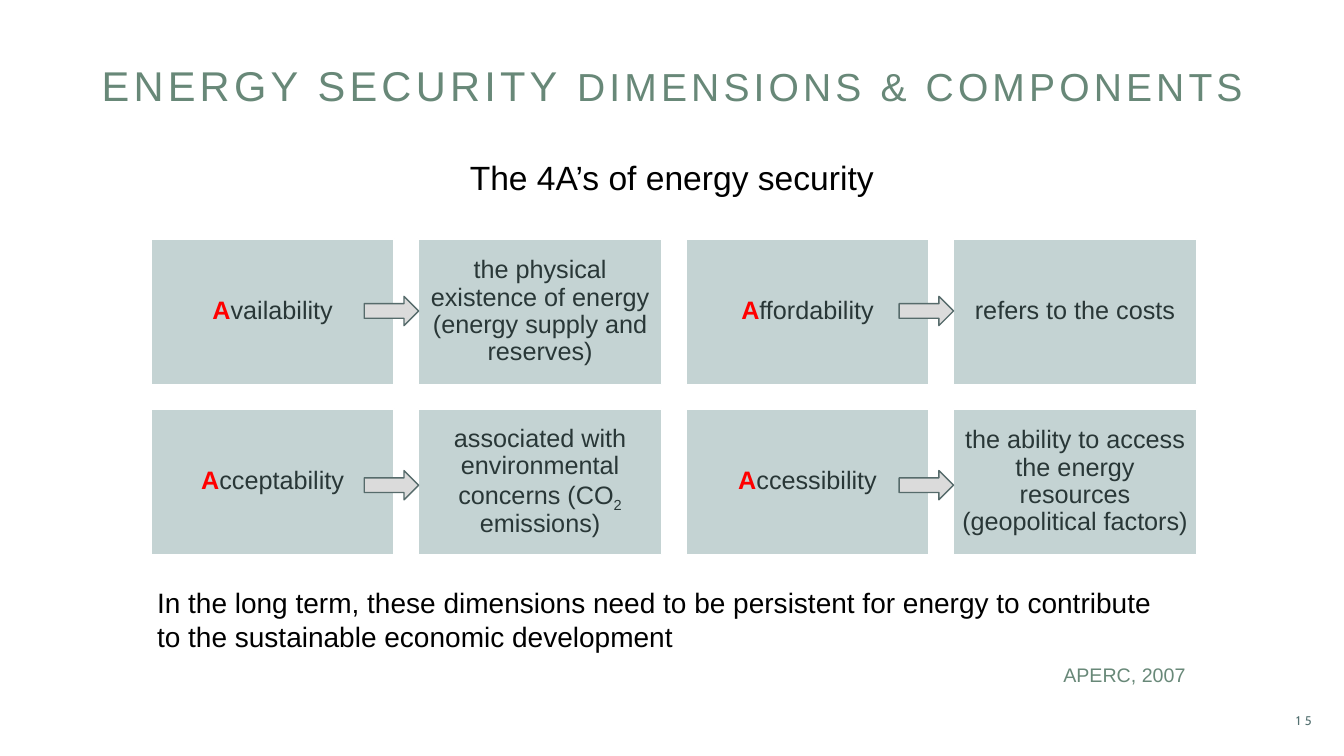
import dataclasses

import pptx
import pptx.dml.color
import pptx.enum.shapes
import pptx.enum.text
import pptx.util

ALIGN = pptx.enum.text.PP_ALIGN
ANCHOR = pptx.enum.text.MSO_ANCHOR
SHAPE = pptx.enum.shapes.MSO_SHAPE

GRID_UNIT = 0.1  # inches per grid column and row
PAGE_COLUMNS, PAGE_ROWS = 133.33, 75


@dataclasses.dataclass(frozen=True)
class Theme:
    font: str = "Arial"
    number_font: str = "Cabin"
    black: str = "000000"
    sage: str = "688878"
    slate: str = "557272"
    card_fill: str = "C4D3D3"
    card_line: str = "FFFFFF"
    card_text: str = "293737"
    initial: str = "FF0000"
    arrow_fill: str = "DBDBDB"
    arrow_line: str = "566B6B"
    title_large: float = 29.7
    title_small: float = 27.9
    heading: float = 24
    body: float = 20
    card: float = 18
    source: float = 14
    number: float = 9


THEME = Theme()


@dataclasses.dataclass(frozen=True)
class Box:
    """An area in grid columns and rows."""
    left: float
    top: float
    width: float
    height: float

    def lengths(self):
        return [pptx.util.Inches(value * GRID_UNIT)
                for value in (self.left, self.top, self.width, self.height)]


@dataclasses.dataclass(frozen=True)
class Span:
    text: str
    size: float
    color: str
    font: str = THEME.font
    bold: bool = False
    tracking: int = 0  # points
    baseline: int = 0  # percent


def rgb(code):
    return pptx.dml.color.RGBColor.from_string(code)


def write(frame, spans, align=ALIGN.LEFT, anchor=ANCHOR.TOP, wrap=True):
    """Fill the frame's only paragraph with the spans and return it."""
    frame.word_wrap = wrap
    frame.vertical_anchor = anchor
    para = frame.paragraphs[0]
    para.alignment = align
    for span in spans:
        run = para.add_run()
        run.text = span.text
        run.font.name = span.font
        run.font.size = pptx.util.Pt(span.size)
        run.font.bold = span.bold
        run.font.color.rgb = rgb(span.color)
        properties = run._r.get_or_add_rPr()
        if span.tracking:
            properties.set("spc", str(span.tracking * 100))
        if span.baseline:
            properties.set("baseline", str(span.baseline * 1000))
    return para


def add_text(page, box, spans, **layout):
    return write(page.shapes.add_textbox(*box.lengths()).text_frame, spans, **layout)


def add_block(page, kind, box, fill, line):
    block = page.shapes.add_shape(kind, *box.lengths())
    block.shadow.inherit = False
    block.fill.solid()
    block.fill.fore_color.rgb = rgb(fill)
    block.line.color.rgb = rgb(line)
    block.line.width = pptx.util.Pt(1)
    return block


def add_card(page, box, spans):
    card = add_block(page, SHAPE.RECTANGLE, box, THEME.card_fill, THEME.card_line)
    frame = card.text_frame
    inset = pptx.util.Inches(0.07)
    frame.margin_left = frame.margin_right = inset
    frame.margin_top = frame.margin_bottom = inset
    para = write(frame, spans, align=ALIGN.CENTER, anchor=ANCHOR.MIDDLE)
    para.line_spacing = 0.9
    para.space_after = pptx.util.Pt(THEME.card * 0.35)


def add_dimensions(page, box, rows):
    """Lay out rows of term and meaning pairs, each pair joined by an arrow."""
    gap = 2.43
    columns = 2 * len(rows[0])
    width = (box.width - gap * (columns - 1)) / columns
    height = (box.height - gap * (len(rows) - 1)) / len(rows)
    arrow_width, arrow_height, arrow_drop, row_drop = 5.4, 2.9, 5.7, 0.42

    for row, pairs in enumerate(rows):
        top = box.top + row * (height + gap)
        for pair, (term, meaning) in enumerate(pairs):
            left = box.left + 2 * pair * (width + gap)
            meaning_left = left + width + gap
            add_card(page, Box(left, top, width, height), [
                Span(term[0], THEME.card, THEME.initial, bold=True),
                Span(term[1:], THEME.card, THEME.card_text),
            ])
            add_card(page, Box(meaning_left, top, width, height), [
                Span(text, THEME.card, THEME.card_text, baseline=baseline)
                for text, baseline in meaning
            ])
            arrow = Box(meaning_left - arrow_width, top + arrow_drop + row * row_drop,
                        arrow_width, arrow_height)
            add_block(page, SHAPE.RIGHT_ARROW, arrow, THEME.arrow_fill, THEME.arrow_line)


def add_title(page, box):
    para = add_text(page, box, [
        Span("ENERGY SECURITY ", THEME.title_large, THEME.sage, tracking=3),
        Span("DIMENSIONS & COMPONENTS", THEME.title_small, THEME.sage, tracking=3),
    ], anchor=ANCHOR.MIDDLE)
    para.line_spacing = 0.9


def add_page_number(page, box, number):
    add_text(page, box, [
        Span(str(number), THEME.number, THEME.slate, font=THEME.number_font, tracking=3),
    ], align=ALIGN.RIGHT, anchor=ANCHOR.MIDDLE)


def build_dimensions_page(deck):
    page = deck.slides.add_slide(deck.slide_layouts[6])
    add_title(page, Box(9.1, 4.9, 122, 7.7))
    add_page_number(page, Box(121.6, 69.5, 9.5, 4), 15)
    add_dimensions(page, Box(15, 23.7, 103.7, 31.3), [
        [
            ("Availability",
             [("the physical existence of energy (energy supply and reserves)", 0)]),
            ("Affordability", [("refers to the costs", 0)]),
        ],
        [
            ("Acceptability",
             [("associated with environmental concerns (CO", 0), ("2", -25),
              (" emissions)", 0)]),
            ("Accessibility",
             [("the ability to access the energy resources (geopolitical factors)", 0)]),
        ],
    ])
    add_text(page, Box(15, 15.1, 103.3, 5),
             [Span("The 4A’s of energy security", THEME.heading, THEME.black)],
             align=ALIGN.CENTER)
    add_text(page, Box(104.5, 65.3, 14.2, 3.4),
             [Span("APERC, 2007", THEME.source, THEME.sage)], wrap=False)
    add_text(page, Box(14.6, 57.6, 103.7, 7.7),
             [Span("In the long term, these dimensions need to be persistent for energy "
                   "to contribute to the sustainable economic development",
                   THEME.body, THEME.black)])


def main():
    deck = pptx.Presentation()
    deck.slide_width = pptx.util.Inches(PAGE_COLUMNS * GRID_UNIT)
    deck.slide_height = pptx.util.Inches(PAGE_ROWS * GRID_UNIT)
    build_dimensions_page(deck)
    deck.save("out.pptx")


if __name__ == "__main__":
    main()
